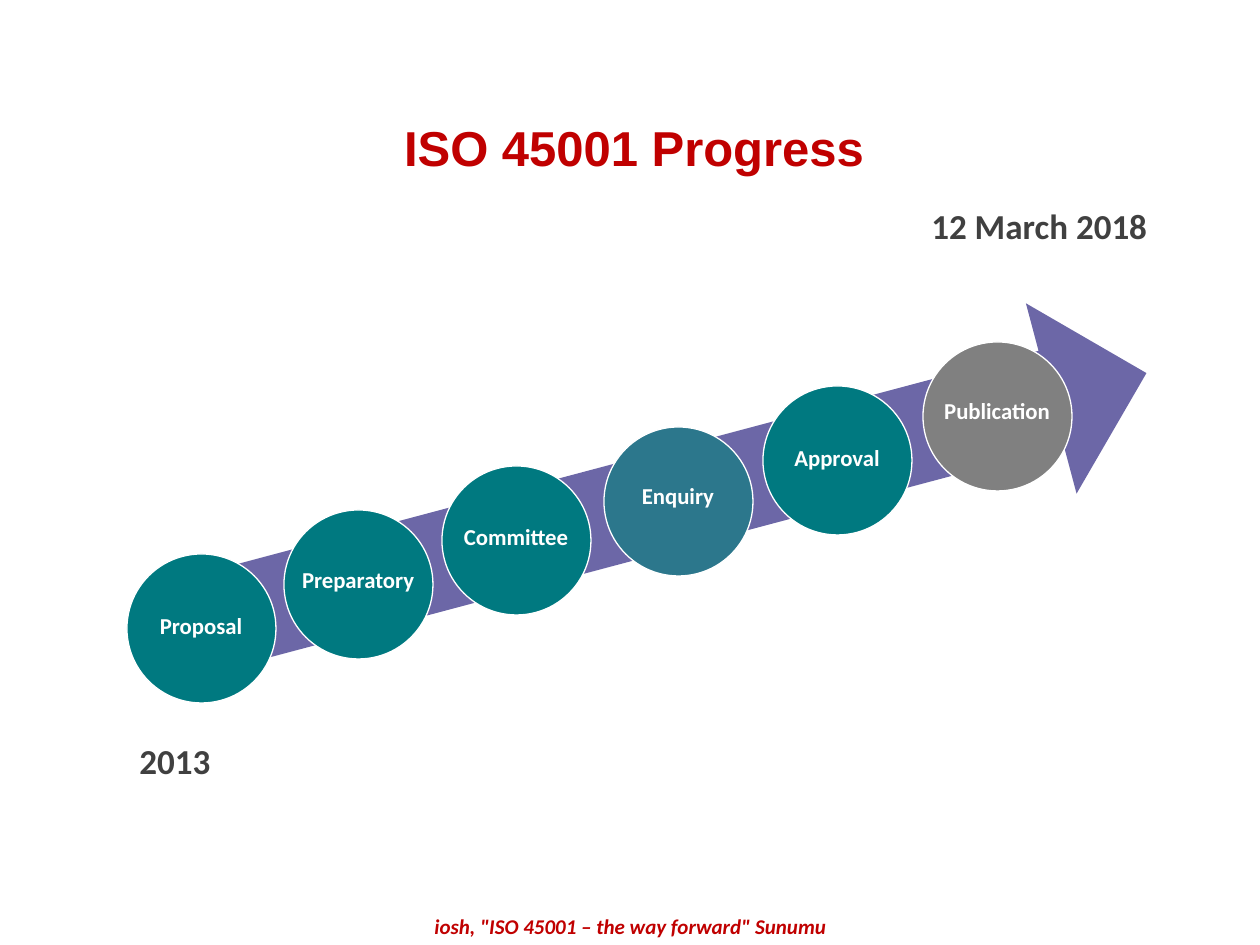
from dataclasses import dataclass

from pptx import Presentation
from pptx.dml.color import RGBColor
from pptx.enum.shapes import MSO_SHAPE
from pptx.enum.text import MSO_ANCHOR, MSO_AUTO_SIZE, PP_ALIGN
from pptx.shapes.base import BaseShape
from pptx.slide import Slide
from pptx.util import Emu, Inches, Pt

PX_PER_INCH = 126
CIRCLE = 149
LABEL_HEIGHT = 40


@dataclass(frozen=True)
class Theme:
    red: str = "C00000"
    dark: str = "404040"
    purple: str = "6C67A7"
    teal: str = "007980"
    blue: str = "2C778C"
    grey: str = "808080"
    white: str = "FFFFFF"
    heading_font: str = "Arial"
    body_font: str = "Calibri"
    title_size: int = 28
    date_size: int = 20
    label_size: int = 13
    source_size: int = 12


@dataclass(frozen=True)
class Box:
    left: int
    top: int
    width: int
    height: int

    def emu(self) -> tuple[Emu, ...]:
        return tuple(px(v) for v in (self.left, self.top, self.width, self.height))


@dataclass(frozen=True)
class Stage:
    name: str
    left: int
    top: int
    label_top: int
    label_width: int
    color: str


THEME = Theme()
STAGES = [
    Stage("Proposal", 127, 554, 606, 166, THEME.teal),
    Stage("Preparatory", 284, 510, 560, 190, THEME.teal),
    Stage("Committee", 442, 466, 517, 190, THEME.teal),
    Stage("Enquiry", 604, 427, 476, 154, THEME.blue),
    Stage("Approval", 763, 386, 438, 190, THEME.teal),
    Stage("Publication", 923, 342, 391, 190, THEME.grey),
]


def px(length: int) -> Emu:
    return Emu(round(length * Inches(1) / PX_PER_INCH))


def write(shape: BaseShape, text: str, *, size: int, color: str,
          font: str = THEME.body_font, align: PP_ALIGN = PP_ALIGN.CENTER,
          italic: bool = False) -> None:
    frame = shape.text_frame
    frame.word_wrap = True
    frame.auto_size = MSO_AUTO_SIZE.NONE
    frame.vertical_anchor = MSO_ANCHOR.TOP
    paragraph = frame.paragraphs[0]
    paragraph.alignment = align
    run = paragraph.add_run()
    run.text = text
    run.font.name = font
    run.font.size = Pt(size)
    run.font.bold = True
    run.font.italic = italic
    run.font.color.rgb = RGBColor.from_string(color)


def paint(shape: BaseShape, color: str) -> None:
    shape.shadow.inherit = False
    shape.fill.solid()
    shape.fill.fore_color.rgb = RGBColor.from_string(color)


def draw_title(slide: Slide, text: str) -> None:
    title = slide.shapes.title
    title.left, title.top, title.width, title.height = Box(76, 111, 1116, 72).emu()
    write(title, text, size=THEME.title_size, color=THEME.red,
          font=THEME.heading_font)


def draw_arrow(slide: Slide) -> None:
    arrow = slide.shapes.add_shape(MSO_SHAPE.RIGHT_ARROW,
                                   *Box(180, 401, 983, 197).emu())
    arrow.rotation = 345.1
    paint(arrow, THEME.purple)
    arrow.line.fill.background()


def draw_stage(slide: Slide, stage: Stage) -> None:
    group = slide.shapes.add_group_shape()
    circle = group.shapes.add_shape(
        MSO_SHAPE.OVAL, *Box(stage.left, stage.top, CIRCLE, CIRCLE).emu())
    paint(circle, stage.color)
    circle.line.color.rgb = RGBColor.from_string(THEME.white)
    circle.line.width = Pt(0.75)
    label_left = stage.left + (CIRCLE - stage.label_width) // 2
    label = group.shapes.add_textbox(
        *Box(label_left, stage.label_top, stage.label_width, LABEL_HEIGHT).emu())
    write(label, stage.name, size=THEME.label_size, color=THEME.white)


def main() -> None:
    presentation = Presentation()
    presentation.slide_width = Inches(10)
    presentation.slide_height = Inches(7.5)
    slide = presentation.slides.add_slide(presentation.slide_layouts[5])

    draw_title(slide, "ISO 45001 Progress")
    draw_arrow(slide)
    for stage in STAGES:
        draw_stage(slide, stage)

    start_date = slide.shapes.add_textbox(*Box(102, 733, 121, 55).emu())
    write(start_date, "2013", size=THEME.date_size, color=THEME.dark,
          align=PP_ALIGN.RIGHT)
    end_date = slide.shapes.add_textbox(*Box(919, 198, 267, 55).emu())
    write(end_date, "12 March 2018", size=THEME.date_size, color=THEME.dark,
          align=PP_ALIGN.LEFT)
    source = slide.shapes.add_textbox(*Box(262, 907, 737, 38).emu())
    write(source, 'iosh, "ISO 45001 – the way forward" Sunumu',
          size=THEME.source_size, color=THEME.red, italic=True)

    presentation.save("out.pptx")


if __name__ == "__main__":
    main()
